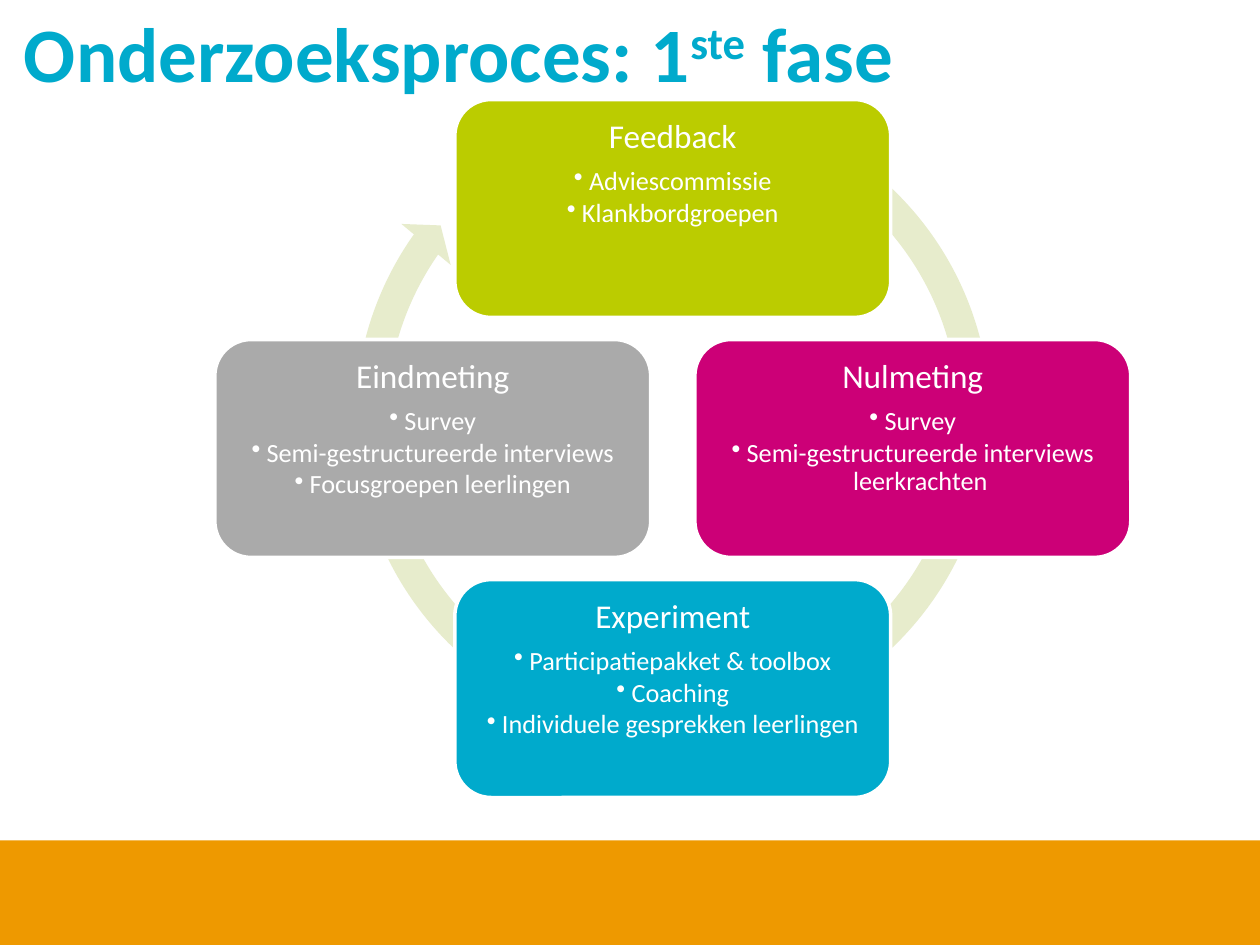
from lxml import etree
from pptx import Presentation
from pptx.dml.color import RGBColor
from pptx.enum import shapes, text
from pptx.oxml.ns import qn
from pptx.util import Inches, Pt

FONT = "Calibri"
WHITE = RGBColor(0xFF, 0xFF, 0xFF)
ORANGE = RGBColor(0xEE, 0x99, 0x00)
BLUE = RGBColor(0x00, 0xAA, 0xCC)
GREEN = RGBColor(0xBB, 0xCC, 0x00)
PINK = RGBColor(0xCC, 0x00, 0x77)
GREY = RGBColor(0xAA, 0xAA, 0xAA)
PALE_GREEN = RGBColor(0xE7, 0xEC, 0xCC)

# Title runs: text, baseline shift in thousandths of a percent
TITLE = [("Onderzoeksproces: 1", 0), ("ste", 30000), (" fase", 0)]

# Steps: heading, items, colour, direction from the centre of the cycle
STEPS = [
    ("Feedback", ["Adviescommissie", "Klankbordgroepen"], GREEN, (0, -1)),
    ("Nulmeting", ["Survey", "Semi-gestructureerde interviews leerkrachten"],
     PINK, (1, 0)),
    ("Experiment", ["Participatiepakket & toolbox", "Coaching",
                    "Individuele gesprekken leerlingen"], BLUE, (0, 1)),
    ("Eindmeting", ["Survey", "Semi-gestructureerde interviews",
                    "Focusgroepen leerlingen"], GREY, (-1, 0)),
]

CENTRE_X, CENTRE_Y, RADIUS = 5.34, 3.56, 1.905
BOX_WIDTH, BOX_HEIGHT = 3.46, 1.73
RING_ADJUSTMENTS = [0.047, 2.729, 129.098, 179.776, 0.048]
RING_BOX = (2.69, 0.67, 5.3, 5.3)


def add_filled(slide, kind, box, colour):
    shape = slide.shapes.add_shape(kind, *map(Inches, box))
    shape.shadow.inherit = False
    shape.fill.solid()
    shape.fill.fore_color.rgb = colour
    shape.line.fill.background()
    return shape


def set_insets(frame, inset):
    frame.margin_left = frame.margin_right = Inches(inset)
    frame.margin_top = frame.margin_bottom = Inches(inset)


def add_run(paragraph, words, size, colour):
    run = paragraph.add_run()
    run.text = words
    run.font.name = FONT
    run.font.size = Pt(size)
    run.font.color.rgb = colour
    return run


def add_bullet(paragraph):
    properties = paragraph._p.get_or_add_pPr()
    properties.set("marL", str(Inches(0.12)))
    properties.set("indent", str(Inches(-0.12)))
    etree.SubElement(properties, qn("a:buChar")).set("char", "•")


def add_title(slide):
    title = slide.shapes.title
    title.left, title.top, title.width, title.height = map(
        Inches, (0.19, -0.46, 8.98, 1.25))
    frame = title.text_frame
    frame.auto_size = text.MSO_AUTO_SIZE.NONE
    frame.vertical_anchor = text.MSO_ANCHOR.BOTTOM
    set_insets(frame, 0)
    paragraph = frame.paragraphs[0]
    paragraph.alignment = text.PP_ALIGN.LEFT
    paragraph.line_spacing = 0.9
    for words, baseline in TITLE:
        run = add_run(paragraph, words, 44, BLUE)
        run.font.bold = True
        if baseline:
            run._r.get_or_add_rPr().set("baseline", str(baseline))


def add_step(slide, heading, items, colour, direction):
    left = CENTRE_X + direction[0] * RADIUS - BOX_WIDTH / 2
    top = CENTRE_Y + direction[1] * RADIUS - BOX_HEIGHT / 2
    shape = add_filled(slide, shapes.MSO_SHAPE.ROUNDED_RECTANGLE,
                       (left, top, BOX_WIDTH, BOX_HEIGHT), colour)
    shape.line.color.rgb = WHITE
    shape.line.width = Pt(2)
    frame = shape.text_frame
    frame.word_wrap = True
    frame.vertical_anchor = text.MSO_ANCHOR.TOP
    set_insets(frame, 0.08)
    for index, words in enumerate([heading] + items):
        paragraph = frame.add_paragraph() if index else frame.paragraphs[0]
        if index:
            paragraph.level = 1
            add_bullet(paragraph)
        paragraph.alignment = text.PP_ALIGN.CENTER
        paragraph.line_spacing = 0.9
        paragraph.space_after = Pt(2 if index else 6.5)
        add_run(paragraph, words, 15 if index else 19, WHITE)


def main():
    presentation = Presentation()
    presentation.slide_width = Inches(10)
    presentation.slide_height = Inches(7.5)
    slide = presentation.slides.add_slide(presentation.slide_layouts[5])

    add_filled(slide, shapes.MSO_SHAPE.RECTANGLE, (0, 6.67, 10, 0.83), ORANGE)
    add_title(slide)
    ring = add_filled(slide, shapes.MSO_SHAPE.CIRCULAR_ARROW, RING_BOX, PALE_GREEN)
    for index, value in enumerate(RING_ADJUSTMENTS):
        ring.adjustments[index] = value
    for step in STEPS:
        add_step(slide, *step)

    presentation.save("out.pptx")


if __name__ == "__main__":
    main()
